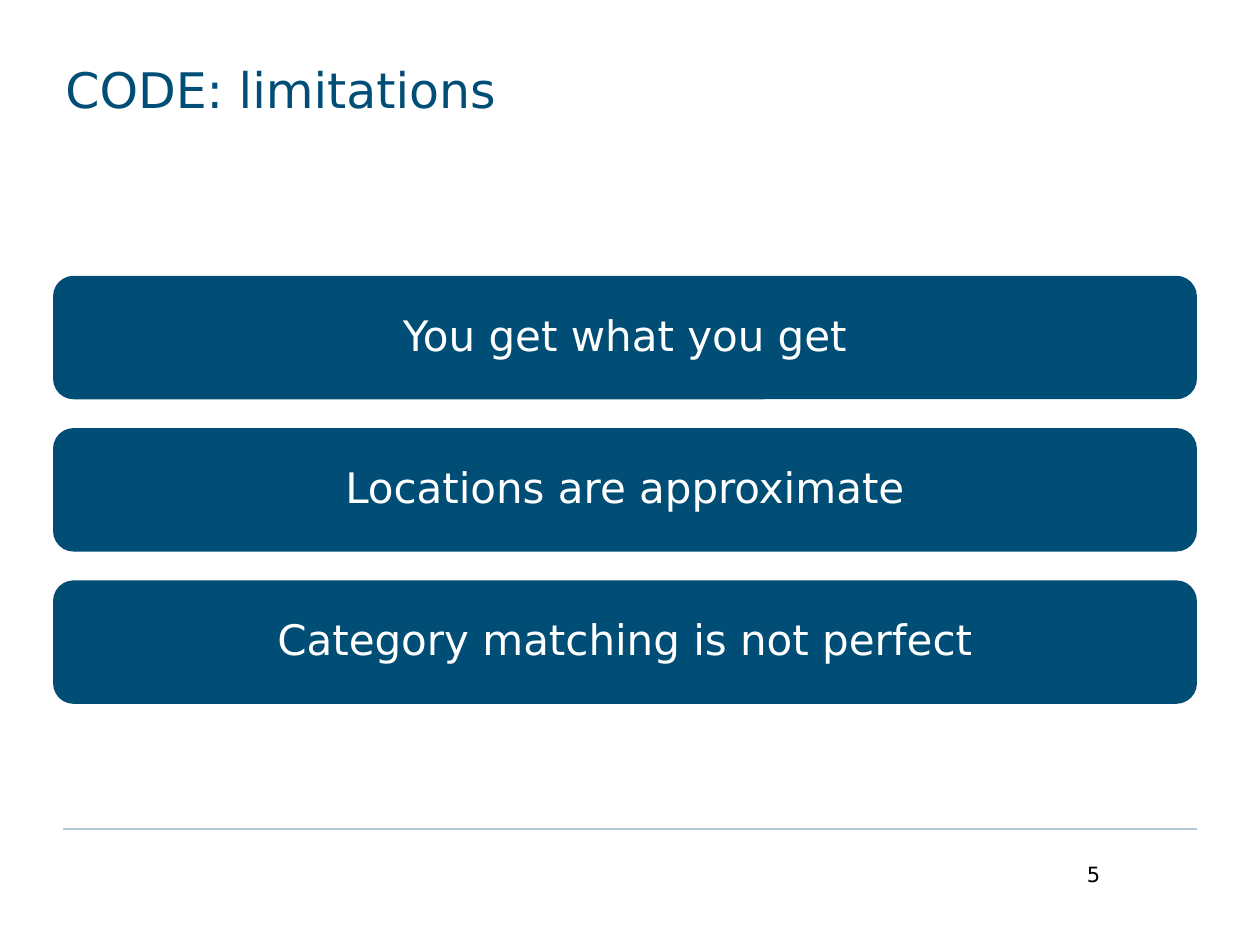
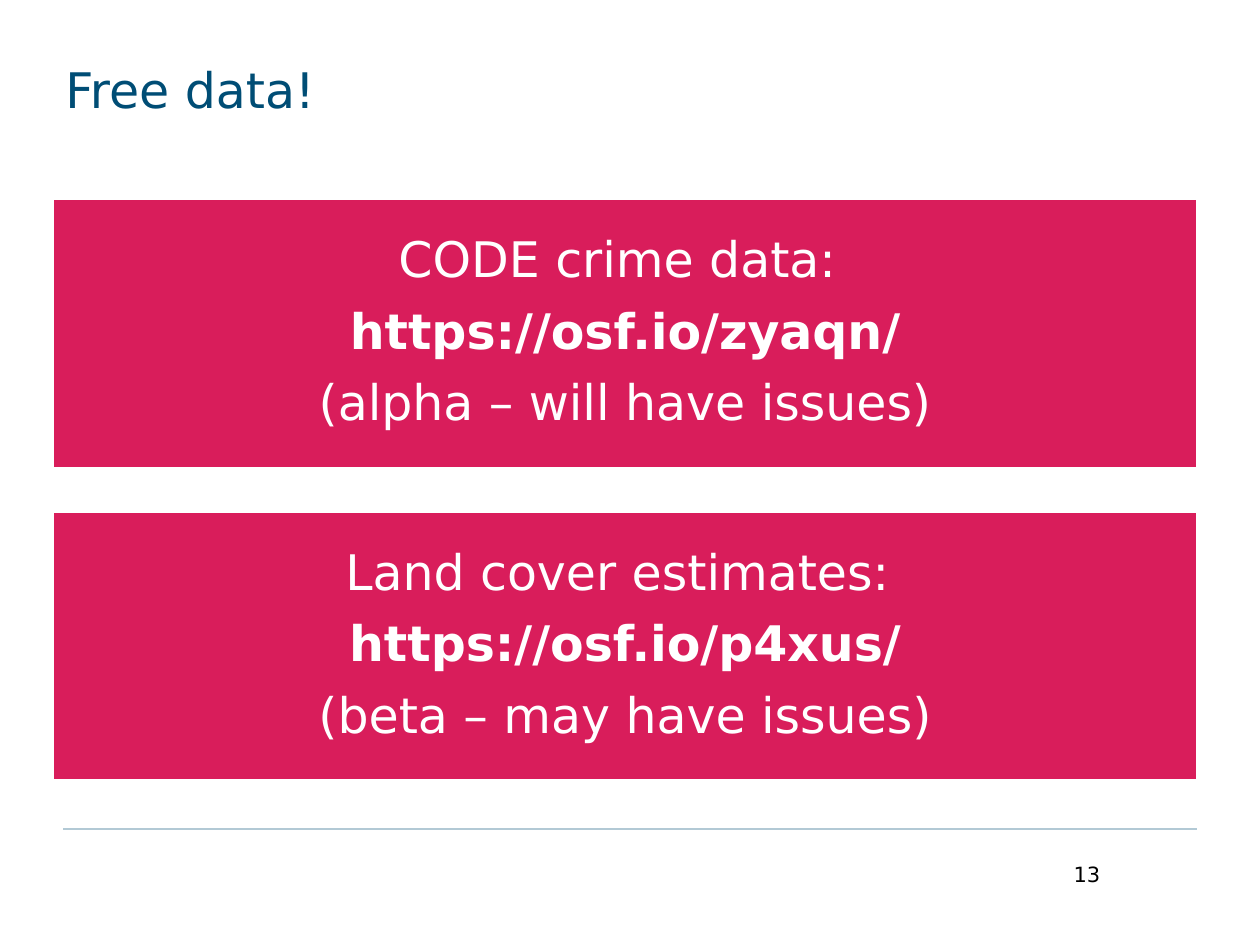
from dataclasses import dataclass

from lxml.etree import SubElement
from pptx import Presentation
from pptx.dml.color import RGBColor
from pptx.enum.shapes import MSO_CONNECTOR, MSO_SHAPE
from pptx.enum.text import MSO_ANCHOR, PP_ALIGN
from pptx.oxml.ns import qn
from pptx.util import Cm, Pt


@dataclass(frozen=True)
class Theme:
    font: str = "DejaVu Sans"
    navy: str = "004D75"
    pink: str = "D91D5B"
    pale: str = "B2C9D5"
    white: str = "FFFFFF"
    black: str = "000000"
    head: int = 28
    body: int = 24
    small: int = 12


# Shared column for the title and all blocks, in cm
LEFT, WIDTH = 1.07, 23.06


class Deck:
    def __init__(self, theme):
        self.theme = theme
        self.prs = Presentation()
        self.prs.slide_width, self.prs.slide_height = Cm(25.4), Cm(19.05)
        self.slide = None

    def page(self, title, number):
        """Start a slide with its title, footer rule and number."""
        look = self.theme
        self.slide = self.prs.slides.add_slide(self.prs.slide_layouts[6])
        self.rule(1.27, 24.13, 16.71)
        self.label(title, (LEFT, 1.07, WIDTH, 2.97), look.head, look.navy)
        self.label(str(number), (16.51, 17.25, 5.92, 1.32), look.small,
                   look.black, PP_ALIGN.RIGHT)

    def rule(self, start, end, top):
        line = self.slide.shapes.add_connector(
            MSO_CONNECTOR.STRAIGHT, Cm(start), Cm(top), Cm(end), Cm(top))
        line.line.color.rgb = RGBColor.from_string(self.theme.pale)
        line.line.width = Pt(1.25)
        SubElement(line._element.spPr, qn("a:effectLst"))

    def style(self, para, size, color, align, bold=False):
        para.alignment = align
        font = para.font
        font.name, font.size, font.bold = self.theme.font, Pt(size), bold
        font.color.rgb = RGBColor.from_string(color)

    def label(self, text, box, size, color, align=PP_ALIGN.LEFT):
        frame = self.slide.shapes.add_textbox(*map(Cm, box)).text_frame
        frame.word_wrap = True
        frame.text = text
        self.style(frame.paragraphs[0], size, color, align)

    def block(self, kind, top, height, fill, lines, size, edge=False):
        """Add a filled block of centred lines; web addresses are bold."""
        shape = self.slide.shapes.add_shape(
            kind, Cm(LEFT), Cm(top), Cm(WIDTH), Cm(height))
        shape.shadow.inherit = False
        shape.fill.solid()
        shape.fill.fore_color.rgb = RGBColor.from_string(fill)
        if edge:
            shape.line.color.rgb = RGBColor.from_string(self.theme.white)
            shape.line.width = Pt(1)
        else:
            shape.line.fill.background()
        frame = shape.text_frame
        frame.word_wrap = True
        frame.vertical_anchor = MSO_ANCHOR.MIDDLE
        frame.text = "\n".join(lines)
        for para in frame.paragraphs:
            para.line_spacing = 0.9
            para.space_after = Pt(round(size * 0.38, 1))
            self.style(para, size, self.theme.white, PP_ALIGN.CENTER,
                       para.text.startswith("https"))


def main():
    look = Theme()
    deck = Deck(look)

    # Limitations: three rounded bars
    deck.page("CODE: limitations", 5)
    limits = ("You get what you get", "Locations are approximate",
              "Category matching is not perfect")
    for row, text in enumerate(limits):
        deck.block(MSO_SHAPE.ROUNDED_RECTANGLE, 5.56 + row * 3.07, 2.49,
                   look.navy, [text], look.body)

    # Free data: two panels
    deck.page("Free data!", 13)
    links = (
        ("CODE crime data: ", "https://osf.io/zyaqn/",
         "(alpha – will have issues)"),
        ("Land cover estimates: ", "https://osf.io/p4xus/",
         "(beta – may have issues)"),
    )
    for row, lines in enumerate(links):
        deck.block(MSO_SHAPE.RECTANGLE, 4.02 + row * 6.3, 5.41,
                   look.pink, lines, look.head, edge=True)

    deck.prs.save("out.pptx")


if __name__ == "__main__":
    main()
